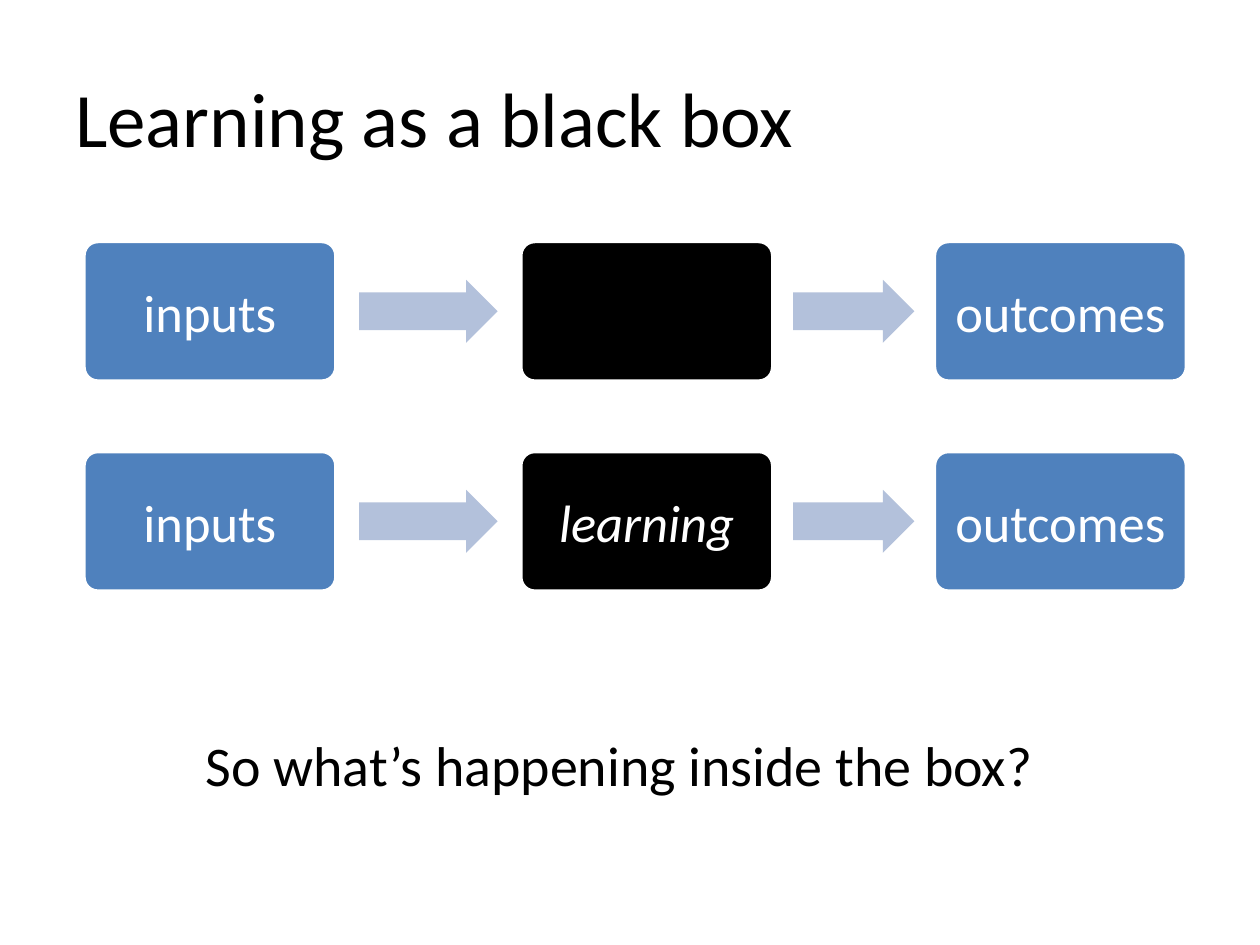
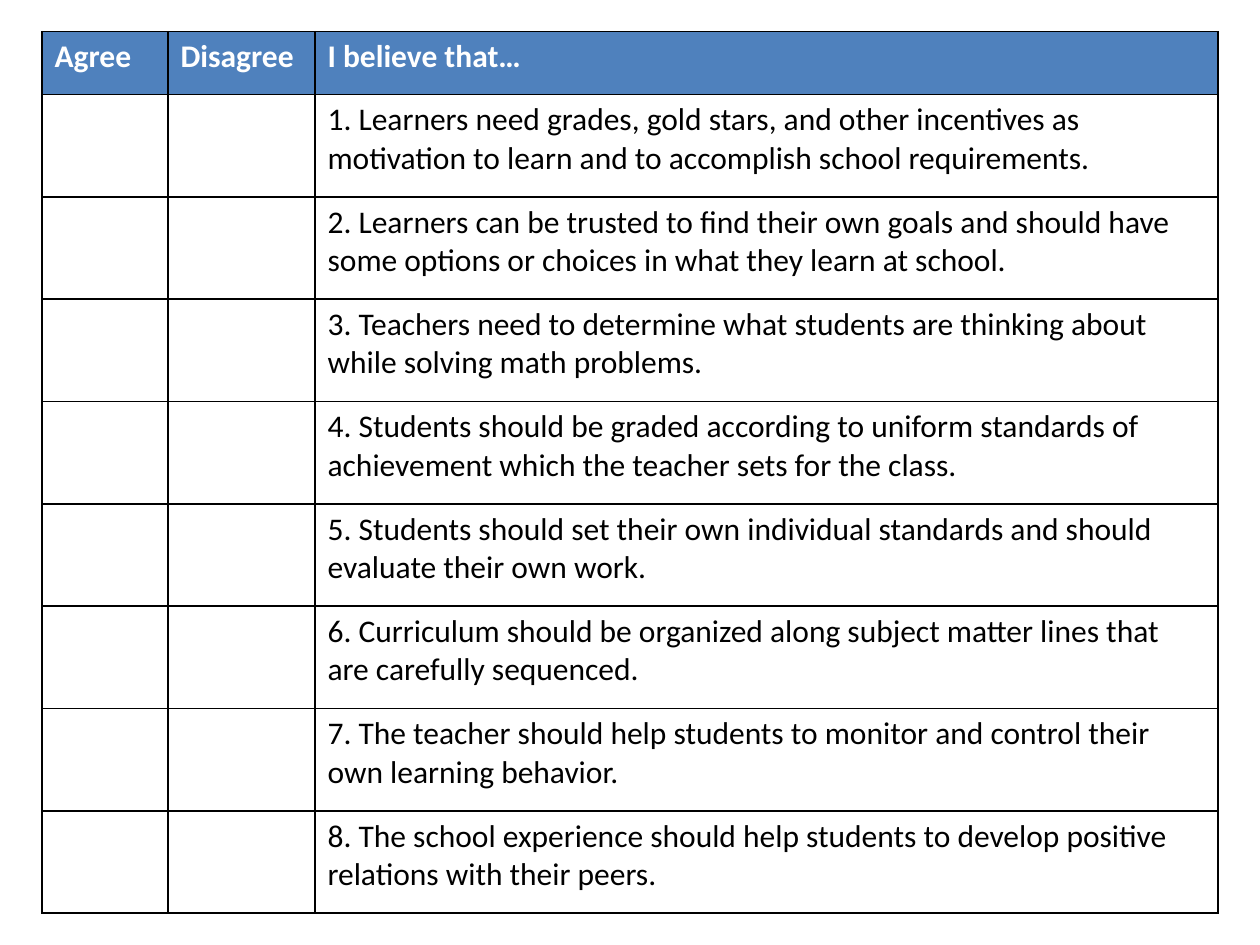
from collections import namedtuple
from dataclasses import dataclass
from itertools import pairwise

from lxml import etree
from pptx import Presentation
from pptx.dml.color import RGBColor
from pptx.enum.shapes import MSO_SHAPE
from pptx.enum.text import MSO_ANCHOR, PP_ALIGN
from pptx.oxml.ns import qn
from pptx.util import Inches, Pt

ROUNDED, ARROW = MSO_SHAPE.ROUNDED_RECTANGLE, MSO_SHAPE.RIGHT_ARROW
LEFT, CENTER = PP_ALIGN.LEFT, PP_ALIGN.CENTER
TOP, MIDDLE = MSO_ANCHOR.TOP, MSO_ANCHOR.MIDDLE

# The slide is a grid of 60 columns by 45 rows; boxes are given in grid units.
COLUMNS, ROWS = 60, 45
Box = namedtuple("Box", "left top width height")


@dataclass(frozen=True)
class Theme:
    font: str = "Calibri"
    blue: str = "4F81BD"
    pale_blue: str = "B3C1DB"
    black: str = "000000"
    white: str = "FFFFFF"
    title_size: int = 44
    question_size: int = 32
    stage_size: int = 30
    table_size: int = 18
    outline: int = 2
    border: int = 1


THEME = Theme()

STAGE_WIDTH = 12
STAGE_LEFTS = (0, 20.8, 40.5)
ARROW_HEIGHT = 3
ARROW_SHARE = 0.75
FLOWS = ((11.5, ""), (21.5, "learning"))

HEADINGS = ("Agree", "Disagree", "I believe that…")
BELIEF_COLUMNS = (6, 7, 43)
HEADER_ROWS = 3
BELIEFS = (
    "Learners need grades, gold stars, and other incentives as motivation to learn "
    "and to accomplish school requirements.",
    "Learners can be trusted to find their own goals and should have some options "
    "or choices in what they learn at school.",
    "Teachers need to determine what students are thinking about while solving math problems.",
    "Students should be graded according to uniform standards of achievement which "
    "the teacher sets for the class.",
    "Students should set their own individual standards and should evaluate their own work.",
    "Curriculum should be organized along subject matter lines that are carefully sequenced.",
    "The teacher should help students to monitor and control their own learning behavior.",
    "The school experience should help students to develop positive relations with their peers.",
)


def units(count):
    return Inches(10 / COLUMNS * count)


def place(box):
    return [units(length) for length in box]


def paint(fill, color):
    fill.solid()
    fill.fore_color.rgb = RGBColor.from_string(color)


def write(frame, text, size, color, align=LEFT, bold=False, italic=False):
    frame.word_wrap = True
    paragraph = frame.paragraphs[0]
    paragraph.text = text
    paragraph.alignment = align
    font = paragraph.font
    font.name, font.size = THEME.font, Pt(size)
    font.bold, font.italic = bold, italic
    font.color.rgb = RGBColor.from_string(color)


def add_text(slide, box, text, size, align=LEFT, anchor=TOP):
    frame = slide.shapes.add_textbox(*place(box)).text_frame
    frame.vertical_anchor = anchor
    write(frame, text, size, THEME.black, align)


def add_preset(slide, kind, box, color, adjustments):
    shape = slide.shapes.add_shape(kind, *place(box))
    shape.shadow.inherit = False
    paint(shape.fill, color)
    shape.line.fill.background()
    for index, value in enumerate(adjustments):
        shape.adjustments[index] = value
    return shape


def add_stage(slide, box, label, color, italic):
    shape = add_preset(slide, ROUNDED, box, color, (0.1,))
    paint(shape.line.fill, THEME.white)
    shape.line.width = Pt(THEME.outline)
    if label:
        frame = shape.text_frame
        frame.margin_left = frame.margin_right = Inches(0.12)
        frame.vertical_anchor = MIDDLE
        write(frame, label, THEME.stage_size, THEME.white, CENTER, italic=italic)


def add_flow(slide, box, middle_label):
    """Three stages, with an arrow centred in each gap between them."""
    stages = (
        ("inputs", THEME.blue, False),
        (middle_label, THEME.black, True),
        ("outcomes", THEME.blue, False),
    )
    for left, stage in zip(STAGE_LEFTS, stages):
        add_stage(slide, Box(box.left + left, box.top, STAGE_WIDTH, box.height), *stage)
    for before, after in pairwise(STAGE_LEFTS):
        gap = after - before - STAGE_WIDTH
        width = gap * ARROW_SHARE
        arrow = Box(
            box.left + before + STAGE_WIDTH + (gap - width) / 2,
            box.top + (box.height - ARROW_HEIGHT) / 2,
            width,
            ARROW_HEIGHT,
        )
        add_preset(slide, ARROW, arrow, THEME.pale_blue, (0.6, 0.5))


def add_borders(cell):
    properties = cell._tc.get_or_add_tcPr()
    for index, side in enumerate(("a:lnL", "a:lnR", "a:lnT", "a:lnB")):
        line = etree.Element(qn(side), w=str(Pt(THEME.border)))
        fill = etree.SubElement(line, qn("a:solidFill"))
        etree.SubElement(fill, qn("a:srgbClr"), val=THEME.black)
        properties.insert(index, line)


def add_belief_table(slide, box):
    rows = [HEADINGS]
    rows += [("", "", f"{number}. {belief}") for number, belief in enumerate(BELIEFS, 1)]
    table = slide.shapes.add_table(len(rows), len(HEADINGS), *place(box)).table
    for column, width in zip(table.columns, BELIEF_COLUMNS):
        column.width = units(width)
    belief_height = (box.height - HEADER_ROWS) / len(BELIEFS)
    for index, texts in enumerate(rows):
        header = index == 0
        table.rows[index].height = units(HEADER_ROWS if header else belief_height)
        for cell, text in zip(table.rows[index].cells, texts):
            paint(cell.fill, THEME.blue if header else THEME.white)
            color = THEME.white if header else THEME.black
            write(cell.text_frame, text, THEME.table_size, color, bold=header)
            add_borders(cell)


def build_black_box_slide(slide):
    add_text(slide, Box(3, 1.8, 54, 7.5), "Learning as a black box",
             THEME.title_size, anchor=MIDDLE)
    for top, middle_label in FLOWS:
        add_flow(slide, Box(4, top, 52.5, 6.65), middle_label)
    add_text(slide, Box(7.5, 34.5, 44, 3.84), "So what’s happening inside the box?",
             THEME.question_size, CENTER)


def build_beliefs_slide(slide):
    add_belief_table(slide, Box(2, 1.5, 56, 42))


def main():
    presentation = Presentation()
    presentation.slide_width, presentation.slide_height = units(COLUMNS), units(ROWS)
    blank = presentation.slide_layouts[6]
    for build in (build_black_box_slide, build_beliefs_slide):
        build(presentation.slides.add_slide(blank))
    presentation.save("out.pptx")


if __name__ == "__main__":
    main()
